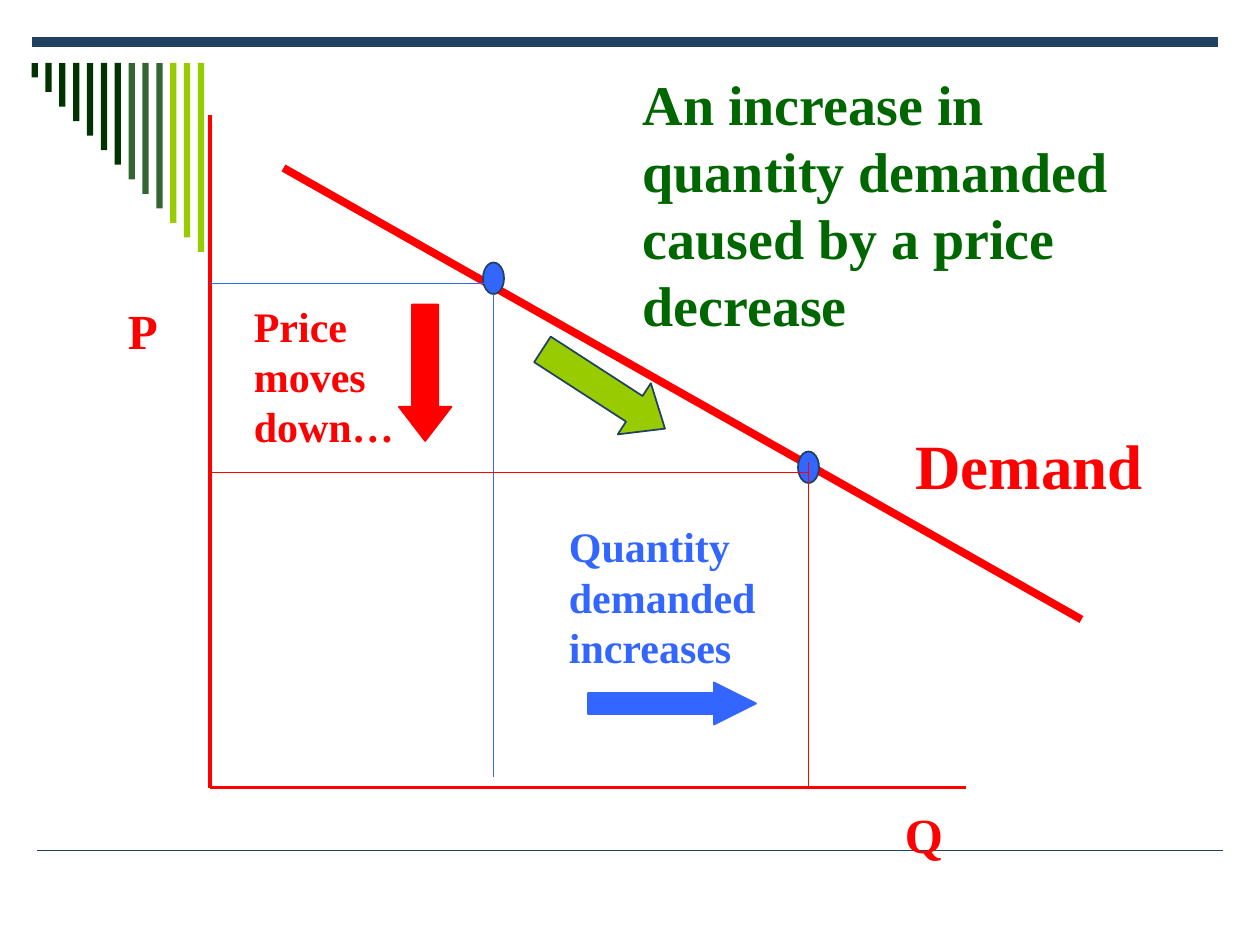
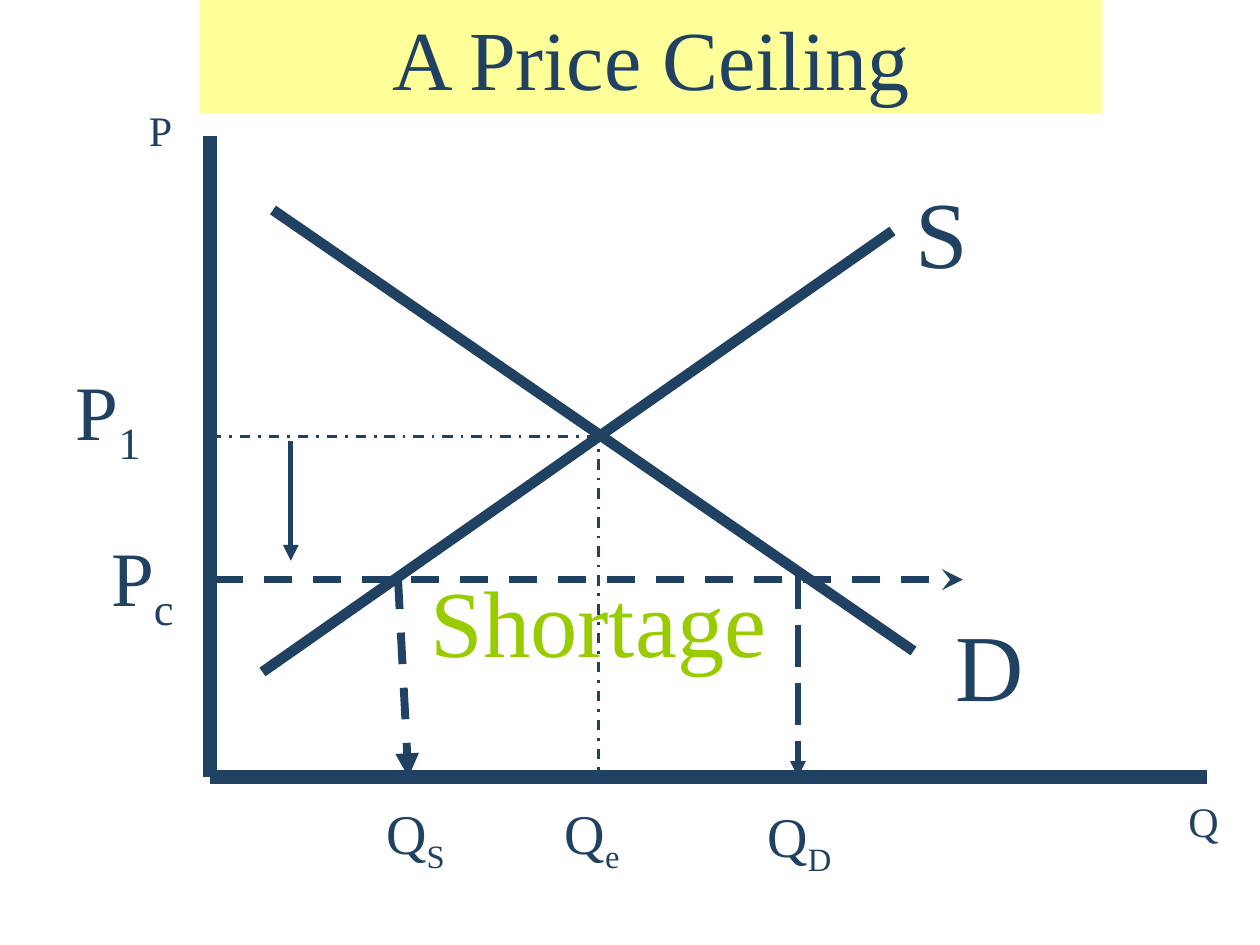
from lxml.etree import SubElement
from pptx import Presentation
from pptx.dml.color import RGBColor
from pptx.enum.dml import MSO_LINE_DASH_STYLE as Dash
from pptx.enum.shapes import MSO_CONNECTOR as Connector, MSO_SHAPE as Shape
from pptx.enum.text import MSO_ANCHOR as Anchor, MSO_AUTO_SIZE as AutoSize, PP_ALIGN as Align
from pptx.oxml.ns import qn
from pptx.util import Inches, Pt

COLUMNS, ROWS = 120, 90
NAVY, RED, BLUE = "204162", "FF0000", "3366FF"
LIME, GREEN, YELLOW = "99CC00", "006600", "FFFF99"
STRIPE_COLORS = ["003300"] * 7 + ["336633"] * 3 + [LIME] * 3


def color(code):
    return RGBColor.from_string(code)


class Board:
    """Draws on the current slide, measuring in grid columns and rows."""

    font = "Times New Roman"

    def __init__(self, deck):
        self.deck = deck
        self.column = deck.slide_width / COLUMNS
        self.row = deck.slide_height / ROWS
        self.page = None

    def new_page(self):
        self.page = self.deck.slides.add_slide(self.deck.slide_layouts[5])

    def place(self, left, top, width, height):
        return (round(left * self.column), round(top * self.row),
                round(width * self.column), round(height * self.row))

    def add_text(self, box, text, size, ink, bold=False, align=Align.LEFT, sub=""):
        frame = box.text_frame
        frame.word_wrap = True
        frame.auto_size = AutoSize.NONE
        frame.vertical_anchor = Anchor.TOP
        para = frame.paragraphs[0]
        para.alignment = align
        for part, baseline in ((text, 0), (sub, -25000)):
            if not part:
                continue
            span = para.add_run()
            span.text = part
            span.font.name = self.font
            span.font.size = Pt(size)
            span.font.bold = bold
            span.font.color.rgb = color(ink)
            if baseline:
                span._r.get_or_add_rPr().set("baseline", str(baseline))

    def title(self, text, at, size, ink, fill=None, **style):
        box = self.page.shapes.title
        box.left, box.top, box.width, box.height = self.place(*at)
        if fill:
            box.fill.solid()
            box.fill.fore_color.rgb = color(fill)
        self.add_text(box, text, size, ink, **style)

    def label(self, text, at, size, ink=NAVY, **style):
        box = self.page.shapes.add_textbox(*self.place(*at))
        self.add_text(box, text, size, ink, **style)

    def shape(self, kind, at, fill, outline=None, turn=0, adjust=()):
        shape = self.page.shapes.add_shape(kind, *self.place(*at))
        shape.shadow.inherit = False
        shape.fill.solid()
        shape.fill.fore_color.rgb = color(fill)
        if outline:
            shape.line.color.rgb = color(outline)
            shape.line.width = Pt(1)
        else:
            shape.line.fill.background()
        shape.rotation = turn
        for index, value in enumerate(adjust):
            shape.adjustments[index] = value

    def line(self, start, end, ink=NAVY, weight=1, dash=None, arrow=None):
        x1, y1, x2, y2 = self.place(*start, *end)
        line = self.page.shapes.add_connector(Connector.STRAIGHT, x1, y1, x2, y2)
        line.line.color.rgb = color(ink)
        line.line.width = Pt(weight)
        if dash:
            line.line.dash_style = dash
        properties = line._element.spPr
        if arrow:
            SubElement(properties.find(qn("a:ln")), qn("a:tailEnd"), type=arrow)
        SubElement(properties, qn("a:effectLst"))

    def axes(self, corner, top, right, ink, weight):
        x, y = corner
        self.line((x, top), corner, ink, weight)
        self.line(corner, (right, y), ink, weight)

    def frame(self):
        """Top band, bottom rule and the corner of growing stripes."""
        self.line((3.5, 81), (116.5, 81))
        self.line((3, 4), (116, 4), weight=6)
        for index, fill in enumerate(STRIPE_COLORS):
            height = 18 * (index + 1) / len(STRIPE_COLORS)
            self.shape(Shape.RECTANGLE, (3 + 1.32 * index, 6, 0.6, height), fill)


def demand_page(board):
    board.new_page()
    board.frame()
    board.title("An increase in quantity demanded caused by a price decrease",
                (60, 6, 49, 26.8), 32, GREEN, bold=True)

    # Axes and demand curve
    board.axes((20, 75), 11, 92, RED, 2.25)
    board.label("P", (11, 28, 6, 6.8), 28, RED, bold=True)
    board.label("Q", (85, 76, 12, 6.8), 28, RED, bold=True)
    board.line((27, 16), (103, 59), RED, 4.5)
    for left, top in ((76, 43), (46, 25)):
        board.shape(Shape.OVAL, (left, top, 2, 3), BLUE, NAVY)
    board.label("Demand", (86, 40, 27, 8.4), 36, RED, bold=True)

    # Guides from both points to the axes
    board.line((47, 27), (20, 27), BLUE)
    board.line((47, 28), (47, 74), BLUE)
    board.line((20, 45), (77, 45), RED)
    board.line((77, 44), (77, 75), RED)

    # Price and quantity changes
    board.label("Price moves down…", (23, 28, 19, 15.6), 24, RED, bold=True)
    board.shape(Shape.DOWN_ARROW, (38, 29, 5, 13), RED, RED, adjust=(0.5, 0.65))
    board.label("Quantity demanded increases", (53, 49, 21, 15.6), 24, BLUE, bold=True)
    board.shape(Shape.RIGHT_ARROW, (56, 65, 16, 4), BLUE, BLUE, adjust=(0.5, 1))
    board.shape(Shape.DOWN_ARROW, (54.6, 30.1, 5.8, 13.9), LIME, NAVY,
                turn=302.9, adjust=(0.5, 0.6))


def ceiling_page(board):
    board.new_page()
    board.title("A Price Ceiling", (19, 0, 86, 10.8), 48, NAVY,
                fill=YELLOW, align=Align.CENTER)

    # Curves and axes
    board.line((26, 20), (87, 62), weight=6)
    board.label("D", (89.8, 57.2, 11, 12), 54)
    board.line((85, 22), (25, 64), weight=6)
    board.label("S", (86, 16, 9, 12), 54)
    board.axes((20, 74), 13, 115, NAVY, 8)
    board.label("P", (13, 9.4, 4.7, 6), 24)
    board.label("Q", (112, 75.2, 4.7, 6), 24)

    # Ceiling price and the shortage below it
    board.label("P", (9.4, 49.8, 9.7, 10), 44, sub="c")
    board.line((20.5, 55.2), (91.7, 55.2), weight=4, dash=Dash.DASH, arrow="stealth")
    board.label("Shortage", (33, 53, 48, 12), 54, LIME, align=Align.CENTER)

    # Equilibrium price and the fall to the ceiling
    board.line((56.9, 41.6), (20, 41.6), weight=1.5, dash=Dash.DASH_DOT)
    board.label("P", (6, 34, 12.8, 10), 44, sub="1")
    board.line((27.7, 42), (27.7, 53.4), weight=3, arrow="triangle")

    # Quantities: supplied, at equilibrium, demanded
    quantities = [
        ("S", (35.6, 75.5), 8.6, (37.9, 55), 38.9, 4.5, Dash.DASH, "triangle"),
        ("e", (52.6, 75.5), 9.1, (57, 41), 57, 1.5, Dash.DASH_DOT, None),
        ("D", (71.9, 75.7), 11.3, (76, 54), 76, 3, Dash.LONG_DASH, "triangle"),
    ]
    for sub, corner, width, start, foot, weight, dash, arrow in quantities:
        board.line(start, (foot, 74), weight=weight, dash=dash, arrow=arrow)
        board.label("Q", (*corner, width, 7.6), 32, sub=sub)


def main():
    deck = Presentation()
    deck.slide_width, deck.slide_height = Inches(10), Inches(7.5)
    board = Board(deck)
    demand_page(board)
    ceiling_page(board)
    deck.save("out.pptx")


if __name__ == "__main__":
    main()
